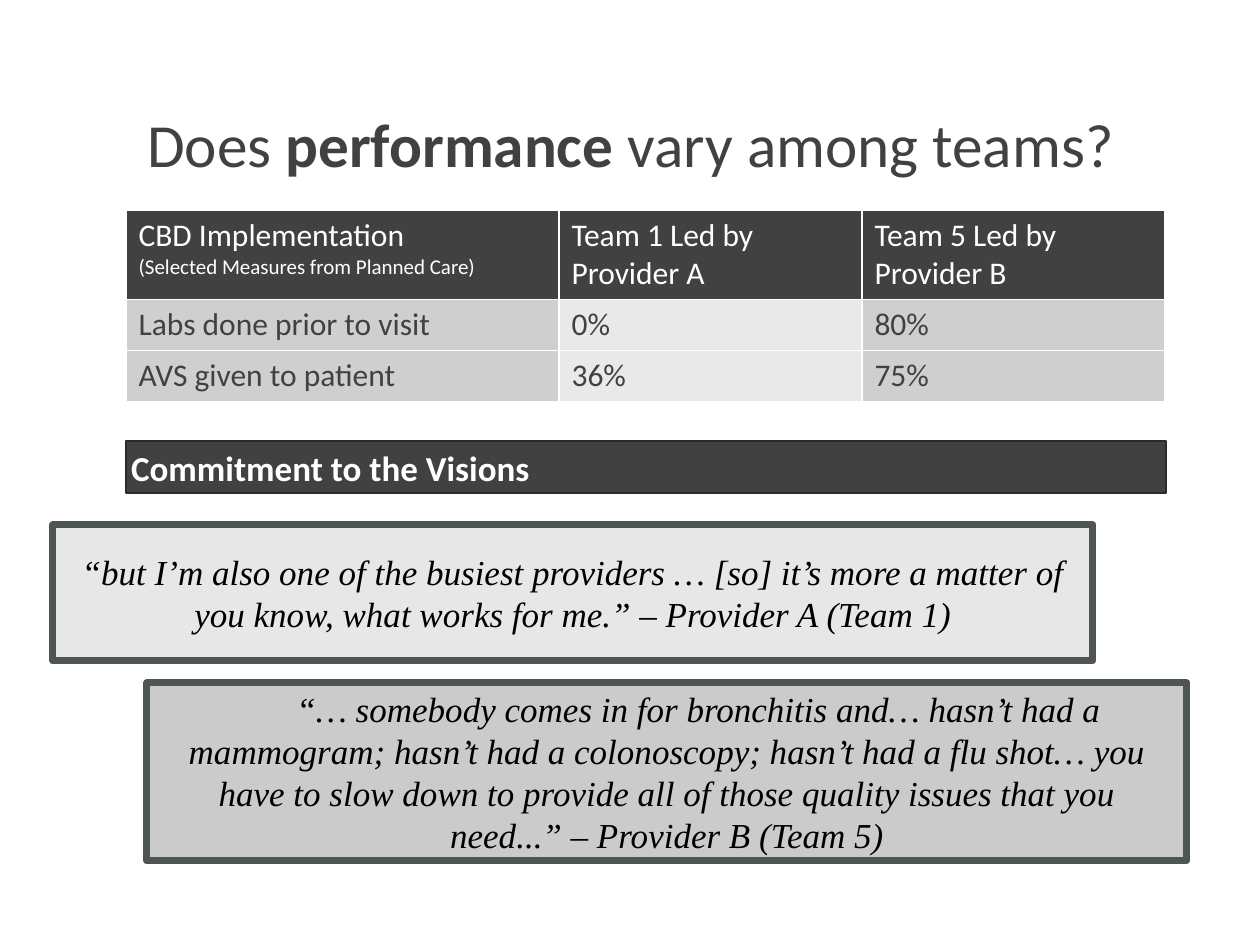
"""Build a slide comparing team performance with a table and two provider quotes."""
from dataclasses import dataclass

from lxml.etree import SubElement
from pptx import Presentation
from pptx.dml.color import RGBColor
from pptx.enum.shapes import MSO_SHAPE as Shape
from pptx.enum.text import MSO_ANCHOR as Anchor, MSO_AUTO_SIZE as AutoSize, PP_ALIGN as Align
from pptx.oxml.ns import qn
from pptx.util import Emu, Pt


@dataclass(frozen=True)
class Theme:
    sans: str = "Calibri"
    serif: str = "Times New Roman"
    dark: str = "414141"
    edge: str = "2B2B2B"
    frame: str = "4F5554"
    white: str = "FFFFFF"
    black: str = "000000"
    label_fill: str = "CFCFCF"
    middle_fill: str = "E9E9E9"
    title_size: int = 35
    quote_size: int = 20
    table_size: int = 18
    note_size: int = 12


@dataclass(frozen=True)
class Quote:
    text: str
    left: int
    top: int
    height: int
    fill: str
    indent: int = 0


THEME = Theme()
PX_PER_INCH = 126
CONTENT_LEFT, CONTENT_WIDTH = 126, 1040
TABLE_TOP = 210
COLUMN_WIDTHS = (433, 303, 303)
ROW_HEIGHTS = (89, 51, 51)
ROWS = (
    ("CBD Implementation", "Team 1 Led by Provider A", "Team 5 Led by Provider B"),
    ("Labs done prior to visit", "0%", "80%"),
    ("AVS given to patient", "36%", "75%"),
)
TABLE_NOTE = "(Selected Measures from Planned Care)"
QUOTES = (
    Quote("“but I’m also one of the busiest providers … [so] it’s more a matter of "
          "you know, what works for me.” – Provider A (Team 1)", 53, 525, 136, "E7E7E7"),
    Quote("“… somebody comes in for bronchitis and… hasn’t had a mammogram; hasn’t had "
          "a colonoscopy; hasn’t had a flu shot… you have to slow down to provide all of "
          "those quality issues that you need...” – Provider B (Team 5)",
          147, 683, 178, "CBCBCB", indent=63),
)


def px(length: int) -> Emu:
    return Emu(round(length * 914400 / PX_PER_INCH))


def rgb(value: str) -> RGBColor:
    return RGBColor.from_string(value)


def add_text(para, text: str, *, size: int, color: str, font: str = THEME.sans,
             bold: bool = False, italic: bool = False) -> None:
    span = para.add_run()
    span.text = text
    span.font.name, span.font.size = font, Pt(size)
    span.font.bold, span.font.italic = bold, italic
    span.font.color.rgb = rgb(color)


def place(box, left: int, top: int, width: int, height: int) -> None:
    box.left, box.top, box.width, box.height = map(px, (left, top, width, height))


def paint(box, fill: str, line: str, width: float) -> None:
    box.fill.solid()
    box.fill.fore_color.rgb = rgb(fill)
    box.line.color.rgb = rgb(line)
    box.line.width = Pt(width)


def set_frame(frame, anchor: Anchor, inset: tuple[int, int]) -> None:
    frame.word_wrap = True
    frame.auto_size = AutoSize.NONE
    frame.vertical_anchor = anchor
    frame.margin_left = frame.margin_right = px(inset[0])
    frame.margin_top = frame.margin_bottom = px(inset[1])


def fill_title(box) -> None:
    place(box, 42, 63, 1191, 122)
    set_frame(box.text_frame, Anchor.BOTTOM, (5, 5))
    para = box.text_frame.paragraphs[0]
    para.alignment = Align.CENTER
    for text, bold in (("Does ", False), ("performance", True), (" vary among teams? ", False)):
        add_text(para, text, size=THEME.title_size, color=THEME.dark, bold=bold)


def fill_heading(box) -> None:
    place(box, CONTENT_LEFT, 441, CONTENT_WIDTH, 52)
    paint(box, THEME.dark, THEME.edge, 1)
    set_frame(box.text_frame, Anchor.TOP, (5, 5))
    para = box.text_frame.paragraphs[0]
    properties = para._p.get_or_add_pPr()
    properties.set("marL", "0")
    properties.set("indent", "0")
    SubElement(properties, qn("a:buNone"))
    para.space_before = Pt(0)
    add_text(para, "Commitment to the Visions", size=THEME.quote_size,
             color=THEME.white, bold=True)


def style_cell(cell, fill: str) -> None:
    properties = cell._tc.get_or_add_tcPr()
    for side in ("a:lnL", "a:lnR", "a:lnT", "a:lnB"):
        line = SubElement(properties, qn(side), w=str(Pt(1)))
        SubElement(SubElement(line, qn("a:solidFill")), qn("a:srgbClr"), val=THEME.white)
    cell.fill.solid()
    cell.fill.fore_color.rgb = rgb(fill)


def add_measures(page) -> None:
    table = page.shapes.add_table(
        len(ROWS), len(COLUMN_WIDTHS), px(CONTENT_LEFT), px(TABLE_TOP),
        px(sum(COLUMN_WIDTHS)), px(sum(ROW_HEIGHTS))).table
    for column, width in zip(table.columns, COLUMN_WIDTHS):
        column.width = px(width)
    for row, height in zip(table.rows, ROW_HEIGHTS):
        row.height = px(height)
    body_fills = (THEME.label_fill, THEME.middle_fill, THEME.label_fill)
    for r, texts in enumerate(ROWS):
        for c, text in enumerate(texts):
            cell = table.cell(r, c)
            style_cell(cell, body_fills[c] if r else THEME.dark)
            add_text(cell.text_frame.paragraphs[0], text, size=THEME.table_size,
                     color=THEME.dark if r else THEME.white)
    add_text(table.cell(0, 0).text_frame.add_paragraph(), TABLE_NOTE,
             size=THEME.note_size, color=THEME.white)


def add_quote(page, quote: Quote) -> None:
    box = page.shapes.add_shape(Shape.RECTANGLE, 0, 0, 0, 0)
    place(box, quote.left, quote.top, CONTENT_WIDTH, quote.height)
    box.shadow.inherit = False
    paint(box, quote.fill, THEME.frame, 4)
    set_frame(box.text_frame, Anchor.MIDDLE, (13, 6))
    para = box.text_frame.paragraphs[0]
    para.alignment = Align.CENTER
    para._p.get_or_add_pPr().set("indent", str(px(quote.indent)))
    add_text(para, quote.text, size=THEME.quote_size, color=THEME.black,
             font=THEME.serif, italic=True)


def main() -> None:
    deck = Presentation()
    deck.slide_width, deck.slide_height = px(1260), px(945)
    page = deck.slides.add_slide(deck.slide_layouts[1])
    fill_title(page.shapes.title)
    add_measures(page)
    fill_heading(page.placeholders[1])
    for quote in QUOTES:
        add_quote(page, quote)
    deck.save("out.pptx")


if __name__ == "__main__":
    main()
